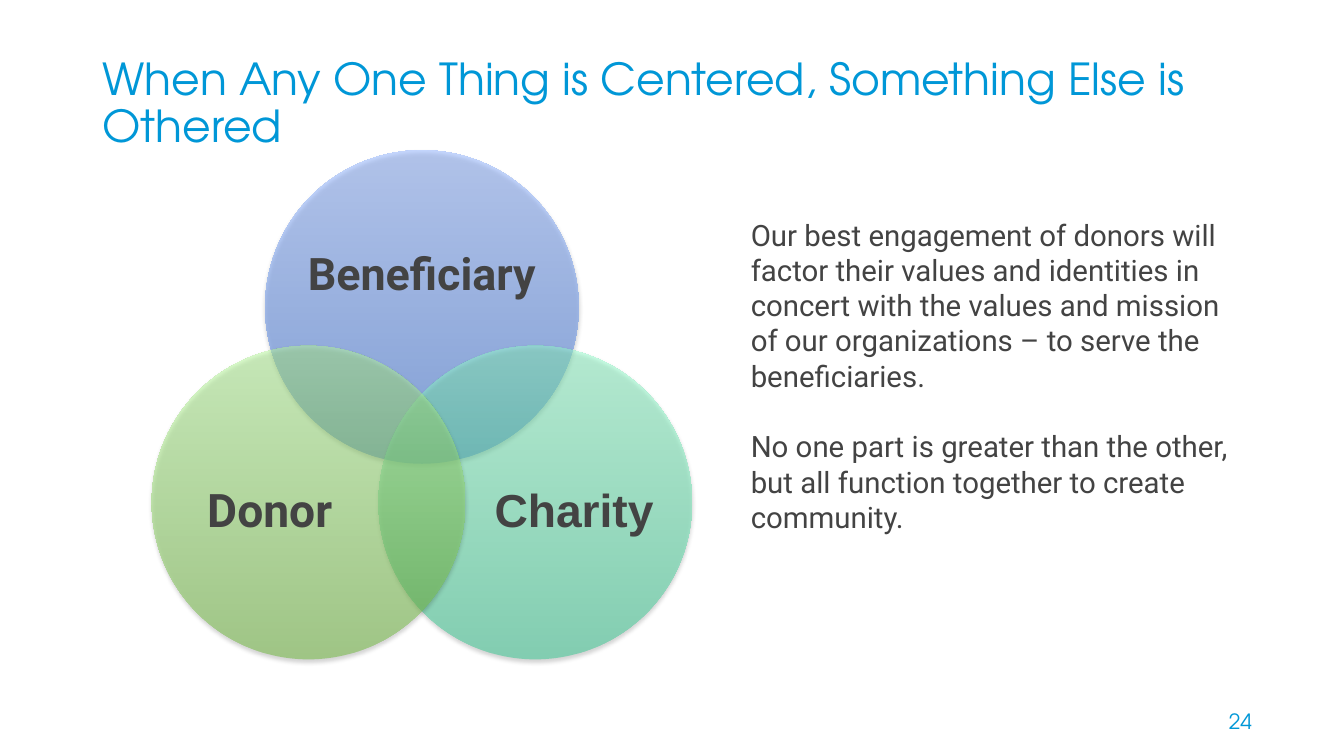
from dataclasses import dataclass
from lxml import etree
from pptx import Presentation
from pptx.dml.color import RGBColor
from pptx.enum.shapes import MSO_SHAPE
from pptx.enum.text import MSO_ANCHOR, PP_ALIGN
from pptx.oxml.ns import qn
from pptx.util import Pt

OVAL = MSO_SHAPE.OVAL
TOP, MID = MSO_ANCHOR.TOP, MSO_ANCHOR.MIDDLE
LEFT, CENTER, RIGHT = PP_ALIGN.LEFT, PP_ALIGN.CENTER, PP_ALIGN.RIGHT


@dataclass(frozen=True)
class Theme:
    blue: str = "0097D7"
    ink: str = "434343"
    head: str = "TeX Gyre Adventor"
    body: str = "Roboto"
    label: str = "Arial"
    title_size: float = 31.5
    body_size: float = 21
    page_size: float = 15
    sky: tuple = ("2F6CD6", "8FB2FF")
    mint: tuple = ("32C890", "97FFCE")
    leaf: tuple = ("6CB838", "B9FB9D")
    alpha: int = 49000


THEME = Theme()


def set_all(target, values):
    for name, value in values.items():
        setattr(target, name, value)


def add_text(slide, box, lines, font, size, color, align=LEFT, anchor=TOP,
             bold=False, pad=(7.2, 3.6), spacing=1.0, gap=0):
    frame = slide.shapes.add_textbox(*map(Pt, box)).text_frame
    side, edge = map(Pt, pad)
    set_all(frame, {"word_wrap": True, "vertical_anchor": anchor,
                    "margin_left": side, "margin_right": side,
                    "margin_top": edge, "margin_bottom": edge})
    for i, line in enumerate(lines):
        para = frame.add_paragraph() if i else frame.paragraphs[0]
        set_all(para, {"alignment": align, "line_spacing": spacing})
        if i:
            para.space_before = Pt(gap)
        run = para.add_run()
        run.text = line
        set_all(run.font, {"name": font, "size": Pt(size), "bold": bold})
        run.font.color.rgb = RGBColor.from_string(color)


def add_alpha(color, value):
    etree.SubElement(color, qn("a:alpha"), val=str(value))


def add_shade(shape):
    shape.shadow.inherit = False
    effects = shape._element.spPr.find(qn("a:effectLst"))
    shade = etree.SubElement(effects, qn("a:outerShdw"), blurRad=str(Pt(3.1)),
                             dist=str(Pt(1.8)), dir="5400000", rotWithShape="0")
    add_alpha(etree.SubElement(shade, qn("a:srgbClr"), val="000000"), 34000)


def add_disc(slide, mid, top, size, colors):
    disc = slide.shapes.add_shape(OVAL, Pt(mid - size / 2), Pt(top), Pt(size), Pt(size))
    disc.line.fill.background()
    # Translucent gradient, dark at the foot
    disc.fill.gradient()
    disc.fill.gradient_angle = 90
    for stop, color in zip(disc.fill.gradient_stops, colors):
        stop.color.rgb = RGBColor.from_string(color)
    for color in disc._element.spPr.iter(qn("a:srgbClr")):
        add_alpha(color, THEME.alpha)
    add_shade(disc)


def add_venn(slide):
    mid, size, shift, nudge = 301.4, 224, 81, 108.7
    high, low = 107.3, 247
    wide, small = (164.2, 100.8), (134.6, 123.1)
    # Label, side of the centre, disc top, label top, label size, font, type size, colours
    parts = [
        ("Beneficiary", 0, high, 146.9, wide, THEME.body, 32, THEME.sky),
        ("Charity", 1, low, 304.6, small, THEME.label, 33, THEME.mint),
        ("Donor", -1, low, 304.6, small, THEME.body, 33, THEME.leaf),
    ]
    for name, side, top, y, (w, h), font, pts, colors in parts:
        add_disc(slide, mid + side * shift, top, size, colors)
        box = (mid + side * nudge - w / 2, y, w, h)
        add_text(slide, box, [name], font, pts, THEME.ink, CENTER, MID,
                 bold=True, pad=(0, 0), spacing=0.9)


def main():
    deck = Presentation()
    set_all(deck, {"slide_width": Pt(960), "slide_height": Pt(540)})
    slide = deck.slides.add_slide(deck.slide_layouts[6])

    # Page number and title
    add_text(slide, (860.4, 502.6, 41, 28.8), ["24"], THEME.head,
             THEME.page_size, THEME.blue, RIGHT)
    add_text(slide, (66.2, 41, 828, 67.7),
             ["When Any One Thing is Centered, Something Else is Othered"],
             THEME.head, THEME.title_size, THEME.blue, anchor=MID, spacing=0.9)

    # Three overlapping circles
    add_venn(slide)

    # Explanation
    add_text(slide, (529.2, 151.2, 364.3, 262), [
        "Our best engagement of donors will factor their values and identities in "
        "concert with the values and mission of our organizations – to serve the "
        "beneficiaries.",
        "No one part is greater than the other, but all function together to create "
        "community.",
    ], THEME.body, THEME.body_size, THEME.ink, gap=25.3)

    deck.save("out.pptx")


if __name__ == "__main__":
    main()
